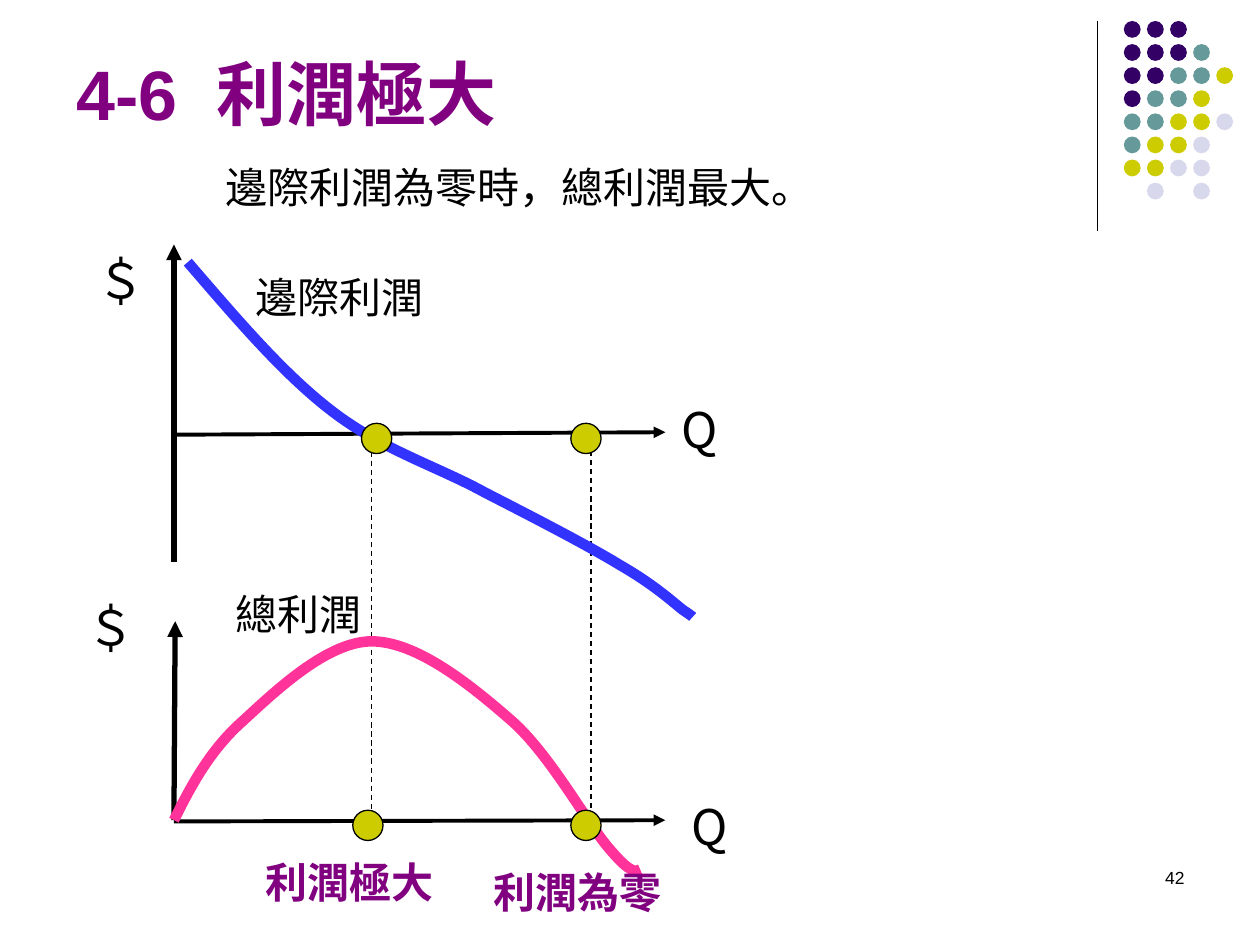
from pptx import Presentation
from pptx.dml.color import RGBColor
from pptx.enum.dml import MSO_LINE
from pptx.enum.shapes import MSO_CONNECTOR, MSO_SHAPE
from pptx.enum.text import MSO_ANCHOR, PP_ALIGN
from pptx.oxml.ns import qn
from pptx.util import Pt
from lxml import etree

OVAL, STRAIGHT = MSO_SHAPE.OVAL, MSO_CONNECTOR.STRAIGHT
TOP, MIDDLE, BOTTOM = MSO_ANCHOR.TOP, MSO_ANCHOR.MIDDLE, MSO_ANCHOR.BOTTOM
LEFT, RIGHT = PP_ALIGN.LEFT, PP_ALIGN.RIGHT
LATIN, CJK = "Arial", "Noto Sans CJK TC"

COLORS = {
    "black": "000000", "heading": "800080", "marginal": "3333FF", "total": "FF3399",
    "P": "330066", "T": "669999", "Y": "CCCC00", "L": "D8D8EC",
}

# Corner ornament: one letter per dot, naming its colour
ORNAMENT = ["PPP", "PPPT", "PPTTY", "PTTY", "TTYYL", "TYYL", "YYLL", ".L.L"]
ORNAMENT_LEFT, ORNAMENT_TOP, ORNAMENT_PITCH, ORNAMENT_DOT = 642.2, 12, 13.2, 9.6
DIVIDER = (627, 12.2, 627, 131.8)

# Lines: x1, y1, x2, y2, width
AXES = [
    (99.4, 469.4, 380.2, 468.7, 2.25),
    (99.4, 468.7, 100.1, 355, 3),
    (99.4, 248.4, 380.2, 247, 2.25),
    (99.4, 321.1, 99.4, 139.7, 3),
]
GUIDES = [(337.7, 252.7, 337.7, 468.7), (212.4, 247.7, 212.4, 468.7)]

# Curves: start point, then three Bezier points per segment
MARGINAL_PROFIT = [
    (107.3, 149.8),
    (134.6, 181.4), (161.3, 213.1), (189.4, 234.7),
    (218.2, 257), (249.8, 266.4), (277.2, 281.5),
    (305.3, 295.9), (336.2, 311.8), (355, 323.3),
    (373.7, 334.1), (383.8, 343.4), (390.2, 348.5),
    (396.7, 352.8), (396, 352.8), (395.3, 352.1),
]
TOTAL_PROFIT = [
    (99.4, 468.7),
    (109.4, 448.6), (120.2, 428.4), (139, 411.8),
    (157.7, 394.6), (187.2, 366.5), (212.4, 366.5),
    (238.3, 366.5), (269.3, 391.7), (292.3, 411.8),
    (314.6, 431.3), (336.2, 471.6), (348.5, 485.3),
    (360.7, 499.7), (363.6, 498.2), (365.8, 496.8),
]
MARKERS = [(326.2, 241.9), (206.6, 241.9), (201.6, 463), (326.2, 463)]
MARKER_SIZE = 17.3

# Labels: text, left, top, width, height, size, colour, bold
LABELS = [
    ("Q", 382.3, 224.6, 33.8, 41, 28, "black", False),
    ("Q", 388.1, 451.4, 33.8, 41, 28, "black", False),
    ("＄", 42.5, 337.7, 42.5, 41, 28, "black", False),
    ("＄", 48.2, 139.7, 42.5, 41, 28, "black", False),
    ("利潤極大", 144.7, 485.3, 111.6, 36.7, 24, "heading", True),
    ("利潤為零", 275, 491, 111.6, 36.7, 24, "heading", True),
    ("邊際利潤", 139, 151.2, 123.8, 36.7, 24, "black", False),
    ("總利潤", 127.4, 332.6, 100, 36.7, 24, "black", False),
    ("邊際利潤為零時，總利潤最大。", 121.7, 88.6, 360, 36, 24, "black", False),
]
TITLE = ("4-6  利潤極大", 36.7, 0, 595.4, 80.6, 40, "heading", True)
PAGE_NUMBER = ("42", 516.2, 491.8, 167.8, 36, 10, "black", False)


def rgb(name):
    return RGBColor.from_string(COLORS[name])


def add_line(shapes, x1, y1, x2, y2, width=0.75, arrow=False, dashed=False):
    line = shapes.add_connector(STRAIGHT, Pt(x1), Pt(y1), Pt(x2), Pt(y2))
    line.line.color.rgb = rgb("black")
    line.line.width = Pt(width)
    if dashed:
        line.line.dash_style = MSO_LINE.DASH
    if arrow:
        etree.SubElement(line.line._get_or_add_ln(), qn("a:tailEnd"), type="triangle")
    etree.SubElement(line._element.spPr, qn("a:effectLst"))


def add_dot(shapes, x, y, size, color, outlined=False):
    dot = shapes.add_shape(OVAL, Pt(x), Pt(y), Pt(size), Pt(size))
    dot.shadow.inherit = False
    dot.fill.solid()
    dot.fill.fore_color.rgb = rgb(color)
    if outlined:
        dot.line.color.rgb = rgb("black")
        dot.line.width = Pt(0.75)
    else:
        dot.line.fill.background()


def add_curve(shapes, points, color):
    """Build an outline through all points, then turn each three into a Bezier segment."""
    (start_x, start_y), *controls = [(Pt(x), Pt(y)) for x, y in points]
    builder = shapes.build_freeform(start_x, start_y)
    builder.add_line_segments(controls, close=False)
    curve = builder.convert_to_shape()
    curve.shadow.inherit = False
    curve.fill.background()
    curve.line.color.rgb = rgb(color)
    curve.line.width = Pt(6)
    etree.SubElement(curve.line._get_or_add_ln(), qn("a:miter"), lim="800000")
    steps = curve._element.xpath(".//a:lnTo")
    outline = steps[0].getparent()
    for first in range(0, len(steps), 3):
        segment = etree.SubElement(outline, qn("a:cubicBezTo"))
        for step in steps[first:first + 3]:
            segment.append(step[0])
            outline.remove(step)


def add_label(shapes, label, font=CJK, anchor=MIDDLE, align=LEFT):
    text, left, top, width, height, size, color, bold = label
    frame = shapes.add_textbox(Pt(left), Pt(top), Pt(width), Pt(height)).text_frame
    frame.word_wrap = True
    frame.vertical_anchor = anchor
    paragraph = frame.paragraphs[0]
    paragraph.alignment = align
    run = paragraph.add_run()
    run.text = text
    run.font.name = font
    run.font.size = Pt(size)
    run.font.bold = bold
    run.font.color.rgb = rgb(color)
    etree.SubElement(run._r.get_or_add_rPr(), qn("a:ea"), typeface=CJK)


def main():
    deck = Presentation()
    deck.slide_width, deck.slide_height = Pt(720), Pt(540)
    shapes = deck.slides.add_slide(deck.slide_layouts[6]).shapes

    add_line(shapes, *DIVIDER)
    for row, colors in enumerate(ORNAMENT):
        for column, color in enumerate(colors):
            if color != ".":
                add_dot(shapes, ORNAMENT_LEFT + column * ORNAMENT_PITCH,
                        ORNAMENT_TOP + row * ORNAMENT_PITCH, ORNAMENT_DOT, color)

    add_label(shapes, TITLE, LATIN, BOTTOM)
    for axis in AXES:
        add_line(shapes, *axis, arrow=True)
    for guide in GUIDES:
        add_line(shapes, *guide, dashed=True)
    add_curve(shapes, MARGINAL_PROFIT, "marginal")
    add_curve(shapes, TOTAL_PROFIT, "total")
    for x, y in MARKERS:
        add_dot(shapes, x, y, MARKER_SIZE, "Y", outlined=True)
    for label in LABELS:
        add_label(shapes, label)
    add_label(shapes, PAGE_NUMBER, LATIN, TOP, RIGHT)

    deck.save("out.pptx")


if __name__ == "__main__":
    main()
